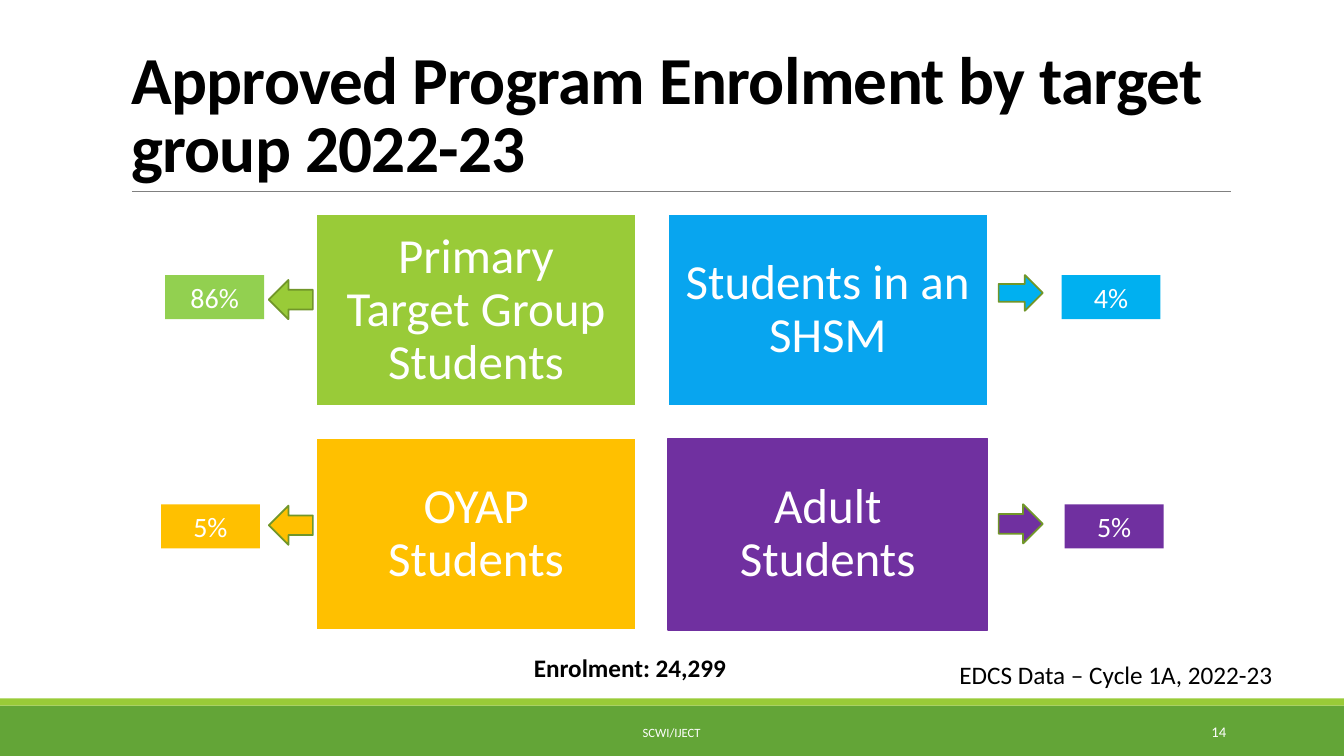
from dataclasses import dataclass
from typing import NamedTuple

from lxml.etree import SubElement
from pptx import Presentation
from pptx.dml.color import RGBColor as Rgb
from pptx.enum.shapes import MSO_CONNECTOR as Conn, MSO_SHAPE as Form
from pptx.enum.text import MSO_ANCHOR as Anchor, MSO_AUTO_SIZE as Fit, PP_ALIGN as Align
from pptx.oxml.ns import qn
from pptx.shapes.autoshape import Shape
from pptx.slide import Slide
from pptx.util import Pt


@dataclass(frozen=True)
class Theme:
    font: str = "Calibri"
    black: str = "000000"
    white: str = "FFFFFF"
    rule: str = "808080"
    edge: str = "719629"
    green: str = "63A537"
    lime: str = "99CB38"
    leaf: str = "92D050"
    blue: str = "08A5EF"
    sky: str = "00B0F0"
    gold: str = "FFC000"
    plum: str = "7030A0"
    title: float = 48
    tile: float = 35
    badge: float = 20
    note: float = 18
    page: float = 10.5
    foot: float = 9
    line: float = 1.25


class Box(NamedTuple):
    left: float
    top: float
    width: float
    height: float


class Group(NamedTuple):
    label: str
    share: str
    fill: str
    edge: str
    tint: str
    badge: Box
    arrow: Box


class Label(NamedTuple):
    text: str
    box: Box
    size: float
    color: str
    align: Align = Align.LEFT
    anchor: Anchor = Anchor.TOP
    bold: bool = False


THEME = Theme()
TILE = Box(226, 153.3, 228.24, 136.9)
STEP_X, STEP_Y = 251.2, 160
INSET = 10.5

GROUPS = (
    Group("Primary Target Group Students", "86%", THEME.lime, THEME.white, THEME.leaf,
          Box(118, 196.5, 70.6, 31.5), Box(192, 200, 31.5, 28)),
    Group("Students in an SHSM", "4%", THEME.blue, THEME.white, THEME.sky,
          Box(758.3, 196.5, 70.6, 31.5), Box(713.3, 196.5, 31.5, 25.5)),
    Group("OYAP Students", "5%", THEME.gold, THEME.white, THEME.gold,
          Box(115, 360.2, 70.6, 31.5), Box(192, 361.2, 31.5, 28)),
    Group("Adult Students", "5%", THEME.plum, THEME.plum, THEME.plum,
          Box(760.5, 360.2, 70.6, 31.5), Box(713.3, 360.2, 31.5, 28)),
)

LABELS = (
    Label("SCWI/IJECT", Box(290, 508.5, 379.5, 28.8), THEME.foot, THEME.white,
          Align.CENTER, Anchor.MIDDLE),
    Label("14", Box(780, 508.5, 103, 28.8), THEME.page, THEME.white,
          Align.RIGHT, Anchor.MIDDLE),
    Label("Enrolment: 24,299", Box(374.2, 462.5, 156.5, 29), THEME.note, THEME.black, bold=True),
    Label("EDCS Data – Cycle 1A, 2022-23", Box(678.2, 467.5, 260, 29), THEME.note, THEME.black),
)


def place(shape: Shape, box: Box) -> None:
    shape.left, shape.top, shape.width, shape.height = (Pt(n) for n in box)


def write(shape: Shape, text: str, size: float, color: str, align: Align,
          anchor: Anchor, bold: bool = False) -> None:
    frame = shape.text_frame
    frame.text = text
    frame.word_wrap = True
    frame.auto_size = Fit.NONE
    frame.vertical_anchor = anchor
    par = frame.paragraphs[0]
    par.alignment = align
    font = par.runs[0].font
    font.name, font.size, font.bold = THEME.font, Pt(size), bold
    font.color.rgb = Rgb.from_string(color)


def draw(slide: Slide, form: Form, box: Box, fill: str, edge: str = "") -> Shape:
    shape = slide.shapes.add_shape(form, *(Pt(n) for n in box))
    shape.shadow.inherit = False
    shape.fill.solid()
    shape.fill.fore_color.rgb = Rgb.from_string(fill)
    if edge:
        shape.line.color.rgb = Rgb.from_string(edge)
        shape.line.width = Pt(THEME.line)
    else:
        shape.line.fill.background()
    return shape


def add_rule(slide: Slide) -> None:
    rule = slide.shapes.add_connector(Conn.STRAIGHT, Pt(94.3), Pt(136.8), Pt(879), Pt(136.8))
    rule.line.color.rgb = Rgb.from_string(THEME.rule)
    rule.line.width = Pt(0.5)
    SubElement(rule._element.spPr, qn("a:effectLst"))


def add_title(slide: Slide, text: str) -> None:
    title = slide.shapes.title
    place(title, Box(86.4, 22.6, 792, 114.2))
    write(title, text, THEME.title, THEME.black, Align.LEFT, Anchor.BOTTOM, True)
    par = title.text_frame.paragraphs[0]
    par.line_spacing = 0.85
    par.runs[0]._r.get_or_add_rPr().set("spc", "-50")


def add_group(slide: Slide, group: Group, row: int, col: int) -> None:
    box = TILE._replace(left=TILE.left + col * STEP_X, top=TILE.top + row * STEP_Y)
    tile = draw(slide, Form.RECTANGLE, box, group.fill, group.edge)
    write(tile, group.label, THEME.tile, THEME.white, Align.CENTER, Anchor.MIDDLE)
    frame = tile.text_frame
    frame.margin_left = frame.margin_right = Pt(INSET)
    frame.margin_top = frame.margin_bottom = Pt(INSET)
    frame.paragraphs[0].line_spacing = 0.9

    badge = draw(slide, Form.RECTANGLE, group.badge, group.tint)
    write(badge, group.share, THEME.badge, THEME.white, Align.CENTER, Anchor.MIDDLE)

    form = Form.RIGHT_ARROW if col else Form.LEFT_ARROW
    tint = group.tint if col else group.fill
    draw(slide, form, group.arrow, tint, THEME.edge)


def add_label(slide: Slide, label: Label) -> None:
    shape = slide.shapes.add_textbox(*(Pt(n) for n in label.box))
    write(shape, label.text, label.size, label.color, label.align, label.anchor, label.bold)


def main() -> None:
    deck = Presentation()
    deck.slide_width, deck.slide_height = Pt(960), Pt(540)
    slide = deck.slides.add_slide(deck.slide_layouts[5])
    draw(slide, Form.RECTANGLE, Box(0, 504, 960, 36), THEME.green)
    draw(slide, Form.RECTANGLE, Box(0, 498.8, 960, 5.2), THEME.lime)
    add_rule(slide)
    add_title(slide, "Approved Program Enrolment by target group 2022-23")
    for spot, group in enumerate(GROUPS):
        add_group(slide, group, *divmod(spot, 2))
    for label in LABELS:
        add_label(slide, label)
    deck.save("out.pptx")


if __name__ == "__main__":
    main()
